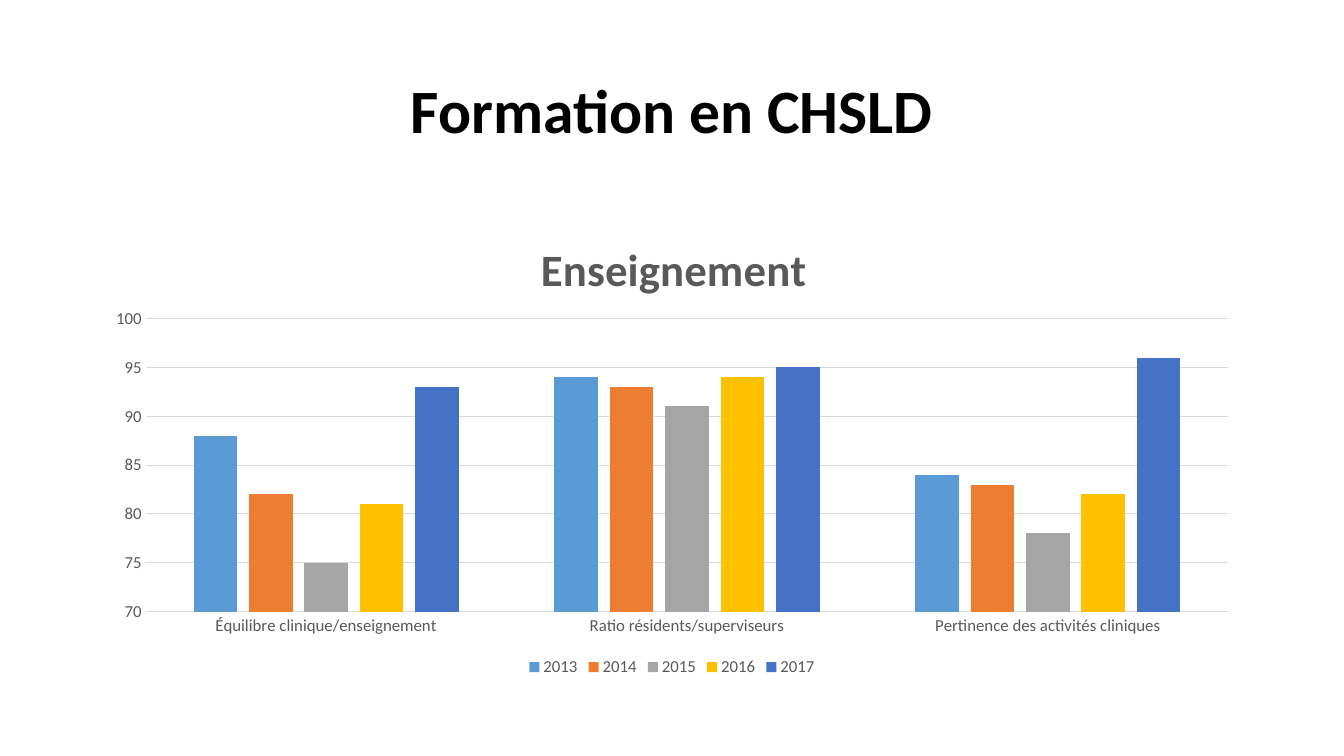
from lxml.etree import SubElement
from pptx import Presentation
from pptx.chart.data import CategoryChartData
from pptx.dml.color import RGBColor
from pptx.enum.chart import XL_CHART_TYPE as ChartType
from pptx.enum.chart import XL_LEGEND_POSITION as LegendPosition
from pptx.enum.chart import XL_TICK_MARK as TickMark
from pptx.enum.text import MSO_ANCHOR as Anchor
from pptx.enum.text import PP_ALIGN as Align
from pptx.oxml.ns import qn
from pptx.util import Pt

FONT = "Calibri"
BLACK, GREY, RULE = "000000", "595959", "D9D9D9"

CATEGORIES = [
    "Équilibre clinique/enseignement",
    "Ratio résidents/superviseurs",
    "Pertinence des activités cliniques",
]
YEARS = [
    ("2013", (88, 94, 84), "5B9BD5"),
    ("2014", (82, 93, 83), "ED7D31"),
    ("2015", (75, 91, 78), "A5A5A5"),
    ("2016", (81, 94, 82), "FFC000"),
    ("2017", (93, 95, 96), "4472C4"),
]


def color(hex_code):
    return RGBColor.from_string(hex_code)


def style_font(font, size, hex_code, bold=False):
    font.name = FONT
    font.size = Pt(size)
    font.bold = bold
    font.color.rgb = color(hex_code)


def style_line(line):
    line.color.rgb = color(RULE)
    line.width = Pt(0.75)


def write(frame, text, size=12, hex_code=BLACK, bold=False, spacing=None):
    para = frame.paragraphs[0]
    para.alignment = Align.CENTER
    para.line_spacing = spacing
    span = para.add_run()
    span.text = text
    style_font(span.font, size, hex_code, bold)


def add_title(page, text):
    box = page.shapes.add_textbox(Pt(66), Pt(28.75), Pt(828), Pt(104.4))
    frame = box.text_frame
    frame.word_wrap = True
    frame.vertical_anchor = Anchor.MIDDLE
    write(frame, text, size=44, bold=True, spacing=0.9)


def place(element, **fractions):
    """Fix a chart part at fractions of the chart's width and height."""
    layout = element.find(qn("c:layout"))
    if layout is None:
        layout = SubElement(element, qn("c:layout"))
        if element.tag == qn("c:title"):
            element.find(qn("c:tx")).addnext(layout)
        else:
            element.insert(0, layout)
    manual = SubElement(layout, qn("c:manualLayout"))
    if "w" in fractions:
        SubElement(manual, qn("c:layoutTarget")).set("val", "inner")
    for side in ("xMode", "yMode"):
        SubElement(manual, qn(f"c:{side}")).set("val", "edge")
    for name, value in fractions.items():
        SubElement(manual, qn(f"c:{name}")).set("val", str(value))


def style_axes(chart):
    for axis in (chart.category_axis, chart.value_axis):
        axis.major_tick_mark = axis.minor_tick_mark = TickMark.NONE
        style_font(axis.tick_labels.font, 12, GREY)
    style_line(chart.category_axis.format.line)
    scale = chart.value_axis
    scale.minimum_scale, scale.maximum_scale = 70, 100
    scale.major_unit = 5
    scale.format.line.fill.background()
    style_line(scale.major_gridlines.format.line)


def add_column_chart(page, title):
    data = CategoryChartData(number_format="General")
    data.categories = CATEGORIES
    for year, scores, _ in YEARS:
        data.add_series(year, scores)
    chart = page.shapes.add_chart(
        ChartType.COLUMN_CLUSTERED, Pt(66), Pt(144), Pt(828), Pt(342.6), data
    ).chart
    style_font(chart.font, 10, BLACK)

    write(chart.chart_title.text_frame, title, size=32, hex_code=GREY, bold=True)
    chart.chart_title.include_in_layout = False
    place(chart.chart_title._element, x=0.38, y=0.06)

    plot = chart.plots[0]
    plot.gap_width, plot.overlap = 219, -27
    plot.vary_by_categories = False
    for series, (_, _, fill) in zip(plot.series, YEARS):
        series.format.fill.solid()
        series.format.fill.fore_color.rgb = color(fill)
    style_axes(chart)
    plot_area = chart._chartSpace.chart.plotArea
    place(plot_area, x=0.046, y=0.244, w=0.934, h=0.611)

    chart.has_legend = True
    chart.legend.position = LegendPosition.BOTTOM
    chart.legend.include_in_layout = False
    style_font(chart.legend.font, 12, GREY)


def main():
    deck = Presentation()
    deck.slide_width, deck.slide_height = Pt(960), Pt(540)
    page = deck.slides.add_slide(deck.slide_layouts[6])
    add_title(page, "Formation en CHSLD")
    add_column_chart(page, "Enseignement")
    deck.save("out.pptx")


if __name__ == "__main__":
    main()
